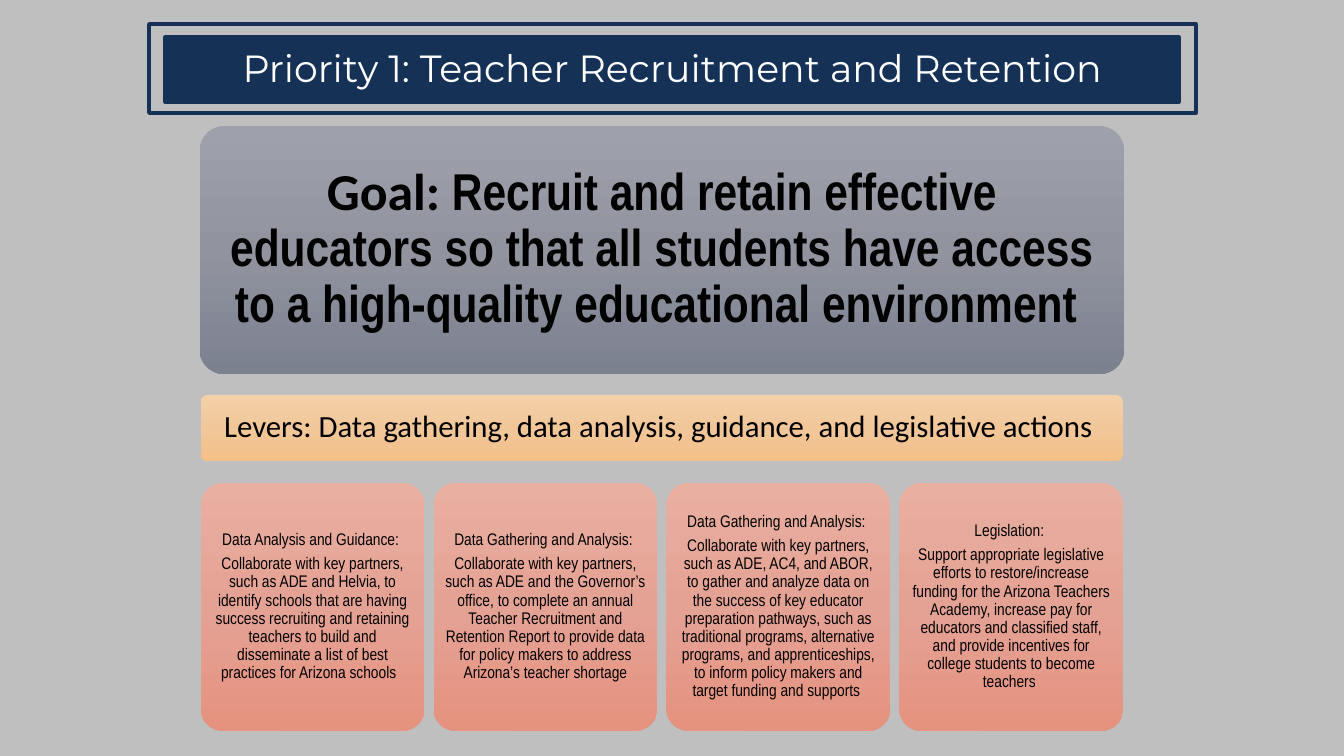
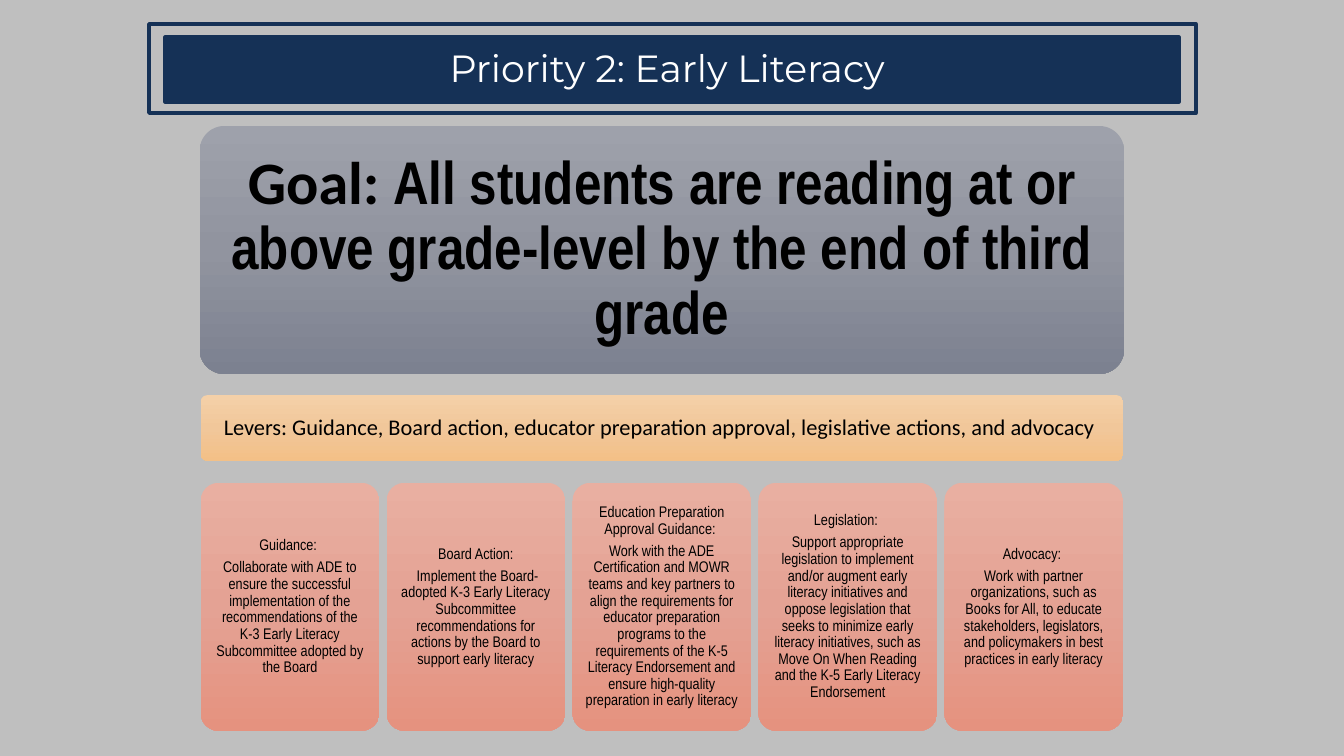
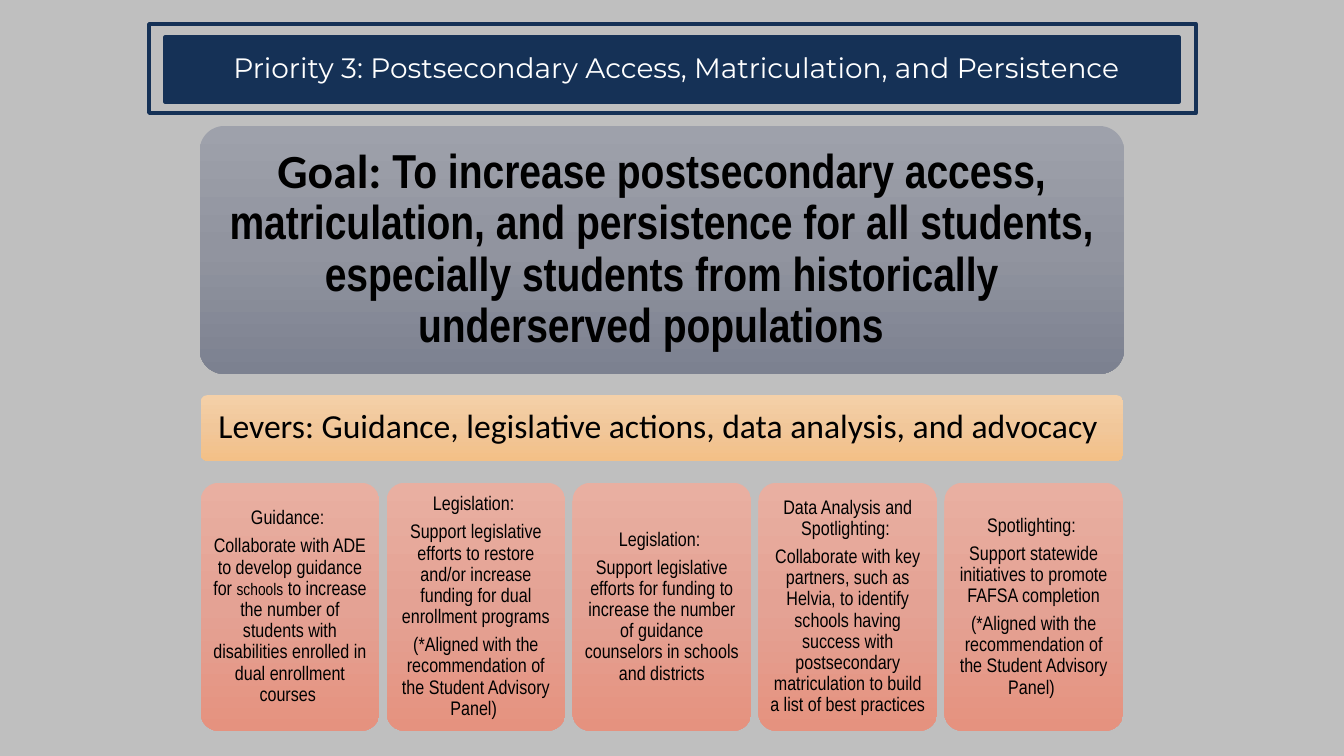
import copy

import pptx
import pptx.dml.color
import pptx.enum.shapes
import pptx.enum.text
import pptx.oxml.ns
import pptx.util

Inches, Pt = pptx.util.Inches, pptx.util.Pt
SHAPE = pptx.enum.shapes.MSO_SHAPE
ALIGN = pptx.enum.text.PP_ALIGN
ANCHOR = pptx.enum.text.MSO_ANCHOR
AUTO_SIZE = pptx.enum.text.MSO_AUTO_SIZE

NAVY, BACKGROUND, WHITE, BLACK = "153156", "BFBFBF", "FFFFFF", "000000"
SLATE = ("9EA1AB", "91949F", "7C8190")
ORANGE = ("F4D0A8", "F1C79A", "F3C087")
CORAL = ("E9AFA1", "E4A294", "E5927F")

BANNER_BOX = (1.48, 0.24, 10.38, 0.88)
GOAL_BOX = (1.98, 1.25, 9.17, 2.46)
LEVERS_BOX = (1.99, 3.92, 9.15, 0.65)
CARDS_BOX = (1.99, 4.79, 9.15, 2.46)
GAP_RATIO = 0.04

ALIGNED = "(*Aligned with the recommendation of the Student Advisory Panel) "

PRIORITIES = [
    {
        "title": ("Priority 1: Teacher Recruitment and Retention", 27, 0),
        "goal": ("Recruit and retain effective educators so that all students have access to a "
                 "high-quality educational environment ", 37),
        "levers": ("Levers: Data gathering, data analysis, guidance, and legislative actions ", 22),
        "card_size": 12,
        "cards": [
            ["Data Analysis and Guidance: ",
             "Collaborate with key partners, such as ADE and Helvia, to identify schools that are "
             "having success recruiting and retaining teachers to build and disseminate a list of "
             "best practices for Arizona schools  "],
            ["Data Gathering and Analysis: ",
             "Collaborate with key partners, such as ADE and the Governor’s office, to complete an "
             "annual Teacher Recruitment and Retention Report to provide data for policy makers to "
             "address Arizona’s teacher shortage"],
            ["Data Gathering and Analysis: ",
             "Collaborate with key partners, such as ADE, AC4, and ABOR, to gather and analyze data "
             "on the success of key educator preparation pathways, such as traditional programs, "
             "alternative programs, and apprenticeships, to inform policy makers and target funding "
             "and supports "],
            ["Legislation: ",
             "Support appropriate legislative efforts to restore/increase funding for the Arizona "
             "Teachers Academy, increase pay for educators and classified staff, and provide "
             "incentives for college students to become teachers "],
        ],
    },
    {
        "title": ("Priority 2: Early Literacy ", 27, 0),
        "goal": ("All students are reading at or above grade-level by the end of third grade", 43),
        "levers": ("Levers: Guidance, Board action, educator preparation approval, legislative "
                   "actions, and advocacy ", 16),
        "card_size": 11,
        "cards": [
            ["Guidance: ",
             "Collaborate with ADE to ensure the successful implementation of the recommendations "
             "of the K-3 Early Literacy Subcommittee adopted by the Board"],
            ["Board Action:",
             " Implement the Board-adopted K-3 Early Literacy Subcommittee recommendations for "
             "actions by the Board to support early literacy"],
            ["Education Preparation Approval Guidance: ",
             "Work with the ADE Certification and MOWR teams and key partners to align the "
             "requirements for educator preparation programs to the requirements of the K-5 "
             "Literacy Endorsement and ensure high-quality preparation in early literacy"],
            ["Legislation: ",
             "Support appropriate legislation to implement and/or augment early literacy "
             "initiatives and oppose legislation that seeks to minimize early literacy "
             "initiatives, such as Move On When Reading and the K-5 Early Literacy Endorsement"],
            ["Advocacy: ",
             "Work with partner organizations, such as Books for All, to educate stakeholders, "
             "legislators, and policymakers in best practices in early literacy"],
        ],
    },
    {
        "title": ("Priority 3: Postsecondary Access, Matriculation, and Persistence ", 20, 0.08),
        "goal": ("To increase postsecondary access, matriculation, and persistence for all "
                 "students, especially students from historically underserved populations  ", 34),
        "levers": ("Levers: Guidance, legislative actions, data analysis, and advocacy ", 24),
        "card_size": 14,
        "cards": [
            ["Guidance: ",
             [("Collaborate with ADE to develop guidance for ", {}),
              ("schools", {"size": Pt(12)}),
              (" to increase the number of students with disabilities enrolled in dual "
               "enrollment courses ", {})]],
            ["Legislation: ",
             "Support legislative efforts to restore and/or increase funding for dual enrollment "
             "programs", ALIGNED],
            ["Legislation: ",
             "Support legislative efforts for funding to increase the number of guidance "
             "counselors in schools and districts"],
            ["Data Analysis and Spotlighting: ",
             "Collaborate with key partners, such as Helvia, to identify schools having success "
             "with postsecondary matriculation to build a list of best practices "],
            ["Spotlighting: ",
             "Support statewide initiatives to promote FAFSA completion", ALIGNED],
        ],
    },
]


def rgb(value):
    """Turn a hex string into a colour."""
    return pptx.dml.color.RGBColor.from_string(value)


def apply(target, formats):
    """Set every attribute in a dict of format values."""
    for name, value in formats.items():
        setattr(target, name, value)


def add_run(p, text, color, formats):
    """Add one formatted run to a paragraph."""
    r = p.add_run()
    r.text = text
    apply(r.font, formats)
    r.font.color.rgb = rgb(color)


def add_box(s, kind, box):
    """Add a preset shape without a shadow."""
    sp = s.shapes.add_shape(kind, *map(Inches, box))
    sp.shadow.inherit = False
    return sp


def fill_gradient(sp, colors):
    """Fill a shape from top to bottom with evenly spaced colours."""
    sp.fill.gradient()
    sp.fill.gradient_angle = 270
    stops = sp._element.find(".//" + pptx.oxml.ns.qn("a:gsLst"))
    stops.insert(1, copy.deepcopy(stops[0]))
    for i, stop in enumerate(sp.fill.gradient_stops):
        stop.position = i / 2
        stop.color.rgb = rgb(colors[i])


def panel(s, box, colors, paragraphs, size, font):
    """Draw a rounded gradient panel with centred text."""
    sp = add_box(s, SHAPE.ROUNDED_RECTANGLE, box)
    sp.adjustments[0] = 0.1
    sp.line.fill.background()
    fill_gradient(sp, colors)
    tf = sp.text_frame
    sides = ("margin_left", "margin_top", "margin_right", "margin_bottom")
    apply(tf, dict.fromkeys(sides, Pt(0.3 * size)))
    apply(tf, {"word_wrap": True, "vertical_anchor": ANCHOR.MIDDLE})
    for i, runs in enumerate(paragraphs):
        p = tf.add_paragraph() if i else tf.paragraphs[0]
        apply(p, {"alignment": ALIGN.CENTER, "line_spacing": 0.9, "space_after": Pt(0.35 * size)})
        for text, formats in [(runs, {})] if isinstance(runs, str) else runs:
            add_run(p, text, BLACK, {"size": Pt(size), "name": font, **formats})


def banner(s, box, text, size, shift):
    """Draw the framed band and put the title on it."""
    left, top, width, height = box
    band_box = (left + 0.16, top + 0.13, width - 0.33, height - 0.24)
    band = add_box(s, SHAPE.RECTANGLE, band_box)
    band.fill.solid()
    band.fill.fore_color.rgb = rgb(NAVY)
    frame = add_box(s, SHAPE.RECTANGLE, box)
    frame.fill.background()
    for sp in (band, frame):
        sp.line.color.rgb = rgb(NAVY)
        sp.line.width = Pt(3)
    title = s.shapes.title
    s.shapes._spTree.append(title._element)
    title_box = (band_box[0] + shift, top + 0.15, band_box[2], 0.56)
    apply(title, dict(zip(("left", "top", "width", "height"), map(Inches, title_box))))
    tf = title.text_frame
    apply(tf, {"word_wrap": True, "auto_size": AUTO_SIZE.NONE, "vertical_anchor": ANCHOR.MIDDLE})
    p = tf.paragraphs[0]
    p.alignment = ALIGN.CENTER
    add_run(p, text, WHITE, {"size": Pt(size), "name": "Montserrat"})


def goal(s, box, text, size):
    """Draw the goal panel."""
    runs = [("Goal: ", {"name": "Calibri", "bold": True}), (text, {"bold": True})]
    panel(s, box, SLATE, [runs], size, "Arial Narrow")


def levers(s, box, text, size):
    """Draw the strip that lists the levers."""
    panel(s, box, ORANGE, [text], size, "Calibri")


def cards(s, box, items, size):
    """Spread the action cards evenly across a box."""
    left, top, width, height = box
    n = len(items)
    card_width = width / (n + GAP_RATIO * (n - 1))
    for i, paragraphs in enumerate(items):
        x = left + i * card_width * (1 + GAP_RATIO)
        panel(s, (x, top, card_width, height), CORAL, paragraphs, size, "Arial Narrow")


def priority_slide(prs, content):
    """Build one priority slide."""
    s = prs.slides.add_slide(prs.slide_layouts[5])
    banner(s, BANNER_BOX, *content["title"])
    goal(s, GOAL_BOX, *content["goal"])
    levers(s, LEVERS_BOX, *content["levers"])
    cards(s, CARDS_BOX, content["cards"], content["card_size"])


def main():
    """Build and save the presentation."""
    prs = pptx.Presentation()
    prs.slide_width, prs.slide_height = Inches(13.33), Inches(7.5)
    fill = prs.slide_master.background.fill
    fill.solid()
    fill.fore_color.rgb = rgb(BACKGROUND)
    for content in PRIORITIES:
        priority_slide(prs, content)
    prs.save("out.pptx")


if __name__ == "__main__":
    main()
